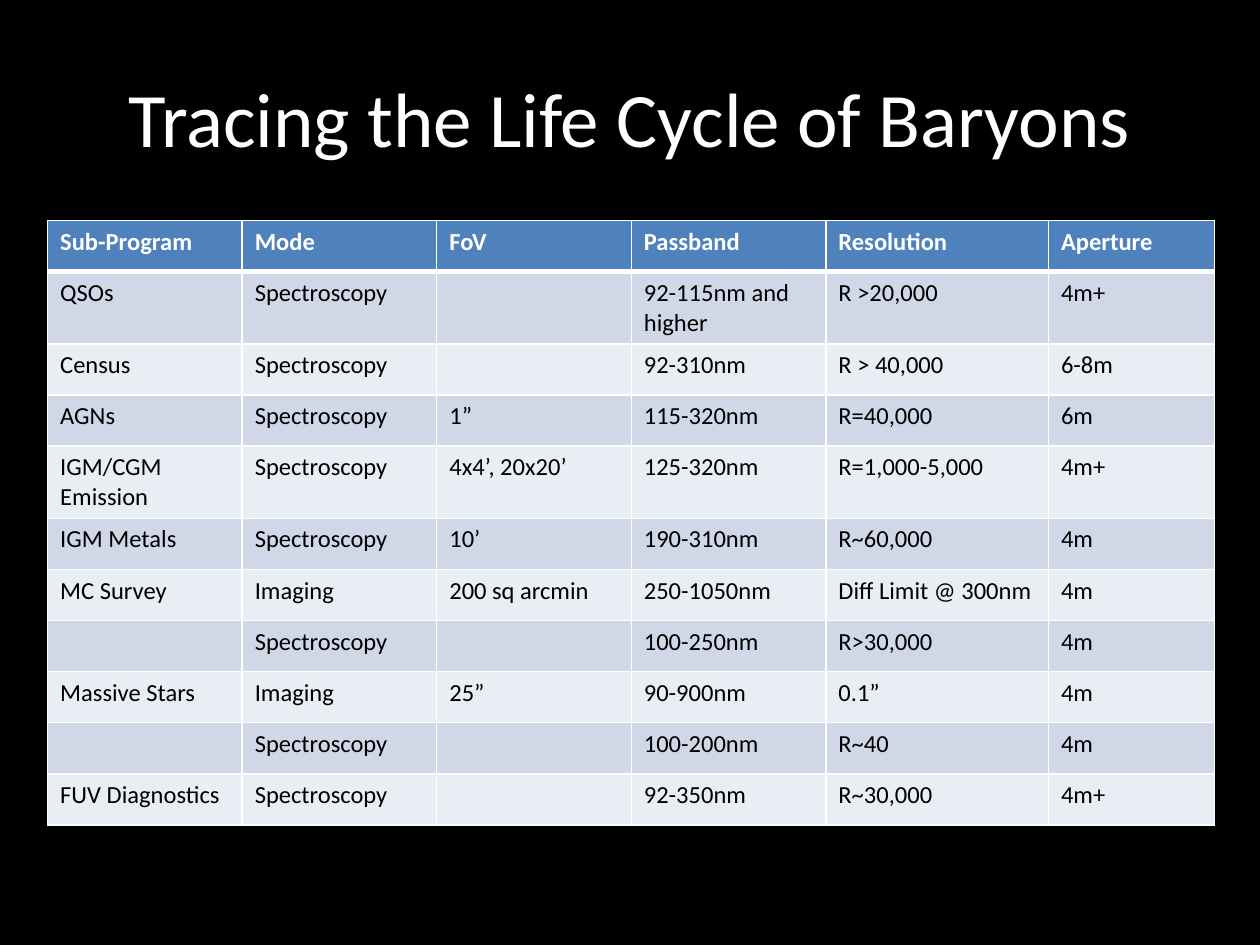
"""Build a slide that tabulates the observing needs of the baryon life cycle programs."""
from lxml import etree
from pptx import Presentation
from pptx import util as u
from pptx.dml import color
from pptx.enum import text
from pptx.oxml import ns

FONT = "Calibri"
COLORS = {
    "background": "000000",
    "title": "FFFFFF",
    "header": "4F81BD",
    "header_text": "FFFFFF",
    "odd_row": "D0D8E8",
    "even_row": "E9EDF4",
    "body_text": "000000",
    "border": "FFFFFF",
}
COLUMN_WIDTHS = [111.2, 111.2, 111.2, 111.2, 127.2, 95]
ROW_HEIGHT = 29.2
PROGRAMS = [
    ("Sub-Program", "Mode", "FoV", "Passband", "Resolution", "Aperture"),
    ("QSOs", "Spectroscopy", "", "92-115nm and higher", "R >20,000", "4m+"),
    ("Census", "Spectroscopy", "", "92-310nm", "R > 40,000", "6-8m"),
    ("AGNs", "Spectroscopy", "1”", "115-320nm", "R=40,000", "6m"),
    ("IGM/CGM Emission", "Spectroscopy", "4x4’, 20x20’", "125-320nm", "R=1,000-5,000", "4m+"),
    ("IGM Metals", "Spectroscopy", "10’", "190-310nm", "R~60,000", "4m"),
    ("MC Survey", "Imaging", "200 sq arcmin", "250-1050nm", "Diff Limit @ 300nm", "4m"),
    ("", "Spectroscopy", "", "100-250nm", "R>30,000", "4m"),
    ("Massive Stars", "Imaging", "25”", "90-900nm", "0.1”", "4m"),
    ("", "Spectroscopy", "", "100-200nm", "R~40", "4m"),
    ("FUV Diagnostics", "Spectroscopy", "", "92-350nm", "R~30,000", "4m+"),
]


def rgb(name):
    """Return the named colour."""
    return color.RGBColor.from_string(COLORS[name])


def add_run(p, words, size, color_name, bold=False):
    """Append a formatted run to a paragraph."""
    r = p.add_run()
    r.text = words
    r.font.name = FONT
    r.font.size = u.Pt(size)
    r.font.bold = bold
    r.font.color.rgb = rgb(color_name)


def set_borders(cell, widths):
    """Draw cell borders with widths in points, keyed by side letter."""
    tc_pr = cell._tc.get_or_add_tcPr()
    for side, width in widths.items():
        ln = etree.SubElement(tc_pr, ns.qn(f"a:ln{side}"), w=str(u.Pt(width)))
        fill = etree.SubElement(ln, ns.qn("a:solidFill"))
        etree.SubElement(fill, ns.qn("a:srgbClr"), val=COLORS["border"])


def add_title(s, left, top, width, height):
    """Place the slide title in the given box."""
    sp = s.shapes.title
    sp.left, sp.top, sp.width, sp.height = map(u.Pt, (left, top, width, height))
    tf = sp.text_frame
    tf.word_wrap = True
    tf.vertical_anchor = text.MSO_ANCHOR.MIDDLE
    p = tf.paragraphs[0]
    p.alignment = text.PP_ALIGN.CENTER
    add_run(p, "Tracing the Life Cycle of Baryons", 44, "title")


def add_program_table(s, left, top):
    """Place the program table with its top left corner at the given point."""
    size = (sum(COLUMN_WIDTHS), ROW_HEIGHT * len(PROGRAMS))
    frame = s.shapes.add_table(
        len(PROGRAMS), len(COLUMN_WIDTHS), *map(u.Pt, (left, top, *size)))
    table = frame.table
    for column, width in zip(table.columns, COLUMN_WIDTHS):
        column.width = u.Pt(width)
    for i, program in enumerate(PROGRAMS):
        table.rows[i].height = u.Pt(ROW_HEIGHT)
        header = i == 0
        fill = "header" if header else "odd_row" if i % 2 else "even_row"
        ink = "header_text" if header else "body_text"
        borders = {"L": 1, "R": 1, "T": 3 if i == 1 else 1, "B": 3 if header else 1}
        for j, words in enumerate(program):
            cell = table.cell(i, j)
            set_borders(cell, borders)
            cell.fill.solid()
            cell.fill.fore_color.rgb = rgb(fill)
            if words:
                add_run(cell.text_frame.paragraphs[0], words, 14, ink, header)


def main():
    """Build and save the presentation."""
    prs = Presentation()
    prs.slide_width, prs.slide_height = u.Pt(720), u.Pt(540)
    s = prs.slides.add_slide(prs.slide_layouts[5])
    s.background.fill.solid()
    s.background.fill.fore_color.rgb = rgb("background")
    add_title(s, 36, 21.6, 648, 90)
    add_program_table(s, 27.2, 126)
    prs.save("out.pptx")


if __name__ == "__main__":
    main()
